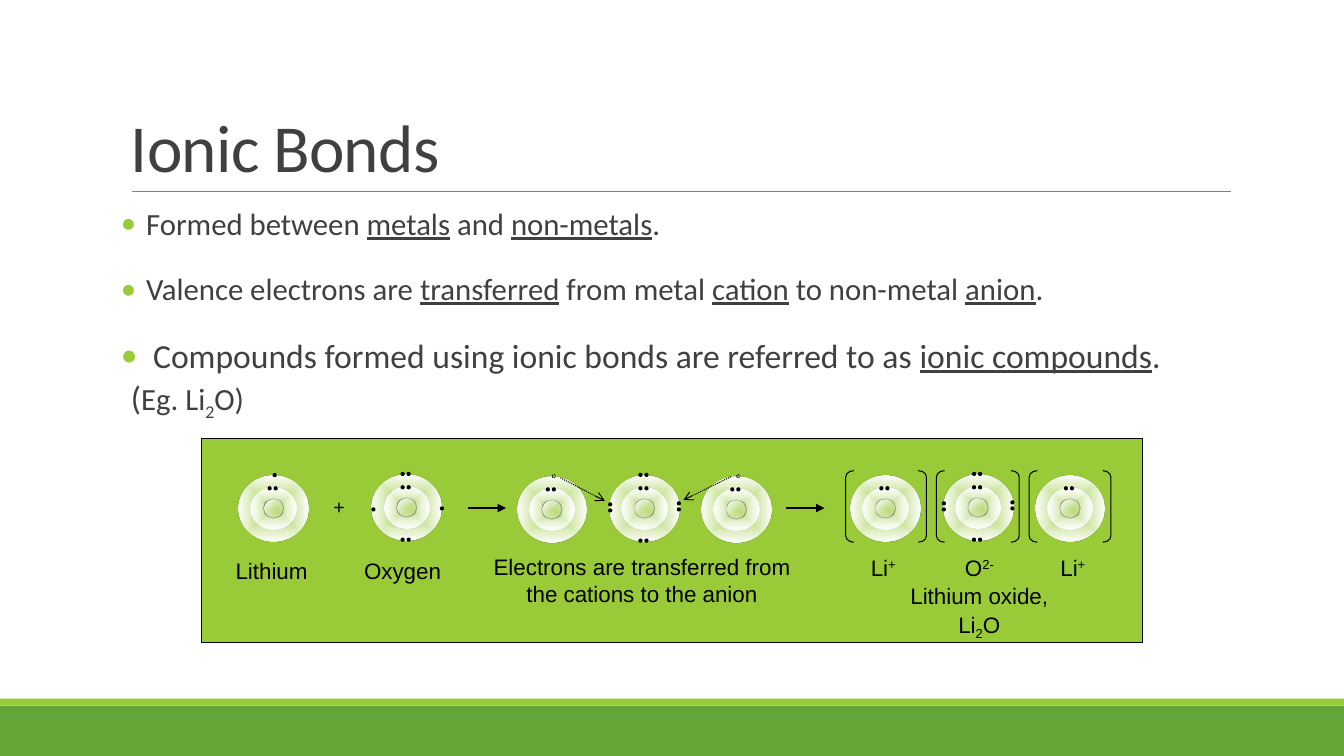
import pptx
import pptx.util
import pptx.dml.color
import pptx.enum.dml
import pptx.enum.shapes
import pptx.enum.text
import pptx.oxml
import pptx.oxml.ns
from lxml import etree

Pt = pptx.util.Pt
SHAPE = pptx.enum.shapes.MSO_SHAPE
DASH = pptx.enum.dml.MSO_LINE
ALIGN = pptx.enum.text.PP_ALIGN
qn = pptx.oxml.ns.qn
NS = 'xmlns:a="http://schemas.openxmlformats.org/drawingml/2006/main"'
LIME, GREEN, BLACK, GREY = "99CB38", "63A537", "000000", "404040"


def paint(target, color):
    """Give a fill, or a font's or line's colour, one solid hex colour."""
    if hasattr(target, "solid"):
        target.solid()
        target = target.fore_color
    else:
        target = target.color
    target.rgb = pptx.dml.color.RGBColor.from_string(color)


def write(paragraph, runs, font, size, color):
    """Add runs of (text, marks): u underlined, + raised, - lowered, L large."""
    for text, marks in runs:
        run = paragraph.add_run()
        run.text = text
        run.font.name = font
        run.font.size = Pt(24 if "L" in marks else size)
        paint(run.font, color)
        if "u" in marks:
            run.font.underline = True
        if "+" in marks:
            run.font._element.set("baseline", "30000") if hasattr(run.font, "_element") else run._r.get_or_add_rPr().set("baseline", "30000")
        if "-" in marks:
            run._r.get_or_add_rPr().set("baseline", "-25000")


deck = pptx.Presentation()
deck.slide_width, deck.slide_height = Pt(960), Pt(540)
slide = deck.slides.add_slide(deck.slide_layouts[6])
shapes = slide.shapes

# Footer bands and diagram panel
for left, top, width, height, color in [
    (0, 504, 960, 36, GREEN),
    (0, 499, 960, 5, LIME),
    (144, 313.2, 672, 146, LIME),
]:
    band = shapes.add_shape(SHAPE.RECTANGLE, Pt(left), Pt(top), Pt(width), Pt(height))
    band.shadow.inherit = False
    paint(band.fill, color)
    band.line.fill.background()
panel = band
paint(panel.line.fill, BLACK)
panel.line.width = Pt(0.75)

# Title
title = shapes.add_textbox(Pt(86.4), Pt(22.3), Pt(792), Pt(114.5)).text_frame
title.word_wrap = True
title.vertical_anchor = pptx.enum.text.MSO_ANCHOR.BOTTOM
heading = title.paragraphs[0]
heading.line_spacing = 0.85
write(heading, [("Ionic Bonds", "")], "Calibri", 48, GREY)
heading.runs[0]._r.get_or_add_rPr().set("spc", "-50")

# Bullet points: indent, space before, bulleted, runs
points = [
    (18, 0, True, [("Formed between ", ""), ("metals", "u"), (" and ", ""),
                   ("non-metals", "u"), (".", "")]),
    (18, 23, True, [("Valence electrons are ", ""), ("transferred", "u"),
                    (" from metal ", ""), ("cation", "u"),
                    (" to non-metal ", ""), ("anion", "u"), (".", "")]),
    (23, 23, True, [("Compounds formed using ionic bonds are referred to as ", "L"),
                    ("ionic compounds", "Lu"), (".", "L")]),
    (7.2, 2, False, [("(", "L"), ("Eg. Li", ""), ("2", "-"), ("O)", "")]),
]
body = shapes.add_textbox(Pt(86.4), Pt(145.4), Pt(792), Pt(166.3)).text_frame
body.word_wrap = True
body.margin_left = body.margin_right = 0
for number, (indent, before, bulleted, runs) in enumerate(points):
    point = body.add_paragraph() if number else body.paragraphs[0]
    point.line_spacing = 0.9
    point.space_before = Pt(before)
    properties = point._p.get_or_add_pPr()
    properties.set("marL", str(int(Pt(indent))))
    if bulleted:
        properties.set("indent", str(-int(Pt(indent))))
        bullet_color = etree.SubElement(properties, qn("a:buClr"))
        etree.SubElement(bullet_color, qn("a:srgbClr"), val=LIME)
        etree.SubElement(properties, qn("a:buFont"), typeface="Calibri")
        etree.SubElement(properties, qn("a:buChar"), char="•")
    write(point, runs, "Calibri", 22, GREY)

# Atom layers, back to front: width, height, outlined, gradient
ball = (f'<a:gradFill {NS} rotWithShape="1"><a:gsLst>'
        '<a:gs pos="0"><a:srgbClr val="FFFFFF"/></a:gs>'
        f'<a:gs pos="100000"><a:srgbClr val="{LIME}"><a:alpha val="6000"/></a:srgbClr></a:gs>'
        '</a:gsLst><a:lin ang="2700000" scaled="1"/></a:gradFill>')
shell = (f'<a:gradFill {NS} rotWithShape="1"><a:gsLst>'
         '<a:gs pos="0"><a:srgbClr val="FFFFFF"><a:alpha val="6000"/></a:srgbClr></a:gs>'
         '<a:gs pos="100000"><a:srgbClr val="FFFFFF"/></a:gs></a:gsLst><a:path path="shape">'
         '<a:fillToRect l="50000" t="50000" r="50000" b="50000"/></a:path></a:gradFill>')
layers = [(14.4, 13.7, True, ball), (32.4, 30.2, False, shell),
          (49.7, 46.8, False, shell), (13.7, 13, False, ball)]

# Electrons as offsets from the atom's centre
inner = [(-2.9, -14.4), (1.4, -14.4)]
lone_pairs = inner + [(x, y) for y in (-24, 23) for x in (-2.9, 1.4)]
lithium = inner + [(0.7, -23.8)]
oxygen = lone_pairs + [(-23.8, 1.4), (25.2, 0.7)]
oxide = lone_pairs + [(-24.5, -2.9), (-24.5, 1.4), (24.5, -3.6), (24.5, 0.7)]
vacancy = [(1.4, -23.8)]
atoms = [
    (195.5, 363.2, lithium, []), (290.5, 362.5, oxygen, []),
    (394.2, 364, inner, vacancy), (526, 364, inner, vacancy),
    (460.4, 363.2, oxide, []), (632.5, 363.2, inner, []),
    (764.3, 363.2, inner, []), (698.7, 362.5, oxide, []),
]
DOT = 2.2
for x, y, electrons, vacancies in atoms:
    for width, height, outlined, gradient in layers:
        layer = shapes.add_shape(SHAPE.OVAL, Pt(x - width / 2), Pt(y - height / 2),
                                 Pt(width), Pt(height))
        layer.shadow.inherit = False
        layer.fill.gradient()
        placeholder_fill = layer._element.spPr.find(qn("a:gradFill"))
        layer._element.spPr.replace(placeholder_fill, pptx.oxml.parse_xml(gradient))
        layer.line.fill.background()
        if outlined:
            paint(layer.line.fill, BLACK)
            layer.line.width = Pt(0.75)
    for dx, dy in electrons + vacancies:
        electron = shapes.add_shape(SHAPE.OVAL, Pt(x + dx - DOT / 2), Pt(y + dy - DOT / 2),
                                    Pt(DOT), Pt(DOT))
        electron.shadow.inherit = False
        paint(electron.line.fill, BLACK)
        electron.line.width = Pt(0.75)
        if (dx, dy) in vacancies:
            electron.fill.background()
            electron.line.dash_style = DASH.ROUND_DOT
        else:
            paint(electron.fill, BLACK)

# Ion brackets
for preset, lefts in [(SHAPE.LEFT_BRACKET, (604.1, 668.9, 735.1)),
                      (SHAPE.RIGHT_BRACKET, (655.9, 722.2, 787.7))]:
    for left in lefts:
        bracket = shapes.add_shape(preset, Pt(left), Pt(336.2), Pt(5.8), Pt(51.1))
        bracket.shadow.inherit = False
        bracket.adjustments[0] = 0.78
        bracket.fill.background()
        paint(bracket.line.fill, BLACK)
        bracket.line.width = Pt(0.75)

# Title rule, reaction arrows and electron transfers
for x1, y1, x2, y2, color, weight, head in [
    (94.5, 136.8, 879, 136.8, "808080", 0.5, None),
    (334.1, 362.9, 361.4, 362.9, BLACK, 1.5, "triangle"),
    (561.6, 362.9, 589, 362.9, BLACK, 1.5, "triangle"),
    (400.3, 341.3, 432, 357.8, BLACK, 0.75, "arrow"),
    (522, 340.6, 488.2, 357.1, BLACK, 0.75, "arrow"),
]:
    arrow = shapes.add_connector(pptx.enum.shapes.MSO_CONNECTOR.STRAIGHT,
                                 Pt(x1), Pt(y1), Pt(x2), Pt(y2))
    paint(arrow.line.fill, color)
    arrow.line.width = Pt(weight)
    if head == "arrow":
        arrow.line.dash_style = DASH.ROUND_DOT
    if head:
        etree.SubElement(arrow.line._get_or_add_ln(), qn("a:tailEnd"), type=head)
    etree.SubElement(arrow._element.spPr, qn("a:effectLst"))

# Diagram labels: box, size, paragraphs of runs
labels = [
    (137.5, 394.6, 113, 31, 16, [[("Lithium", "")]]),
    (233.3, 394.6, 113, 31, 16, [[("Oxygen ", "")]]),
    (230.4, 349.9, 23.8, 28.1, 14, [[("+", "")]]),
    (339.8, 391.7, 237.6, 53.3, 16,
     [[("Electrons are transferred from the cations to the anion", "")]]),
    (604.1, 392.4, 190.8, 75.6, 16,
     [[("\tLi", ""), ("+", "+"), ("\tO", ""), ("2-", "+"), ("\tLi", ""), ("+", "+")],
      [("Lithium oxide,", "")],
      [("Li", ""), ("2", "-"), ("O", "")]]),
]
for left, top, width, height, size, lines in labels:
    label = shapes.add_textbox(Pt(left), Pt(top), Pt(width), Pt(height)).text_frame
    label.word_wrap = True
    for number, runs in enumerate(lines):
        line = label.add_paragraph() if number else label.paragraphs[0]
        line.alignment = ALIGN.CENTER
        if number:
            line.space_before = Pt(1)
        write(line, runs, "Arial", size, BLACK)

# Tab stops that put each ion symbol under its atom
ions = label.paragraphs[0]
ions.alignment = ALIGN.LEFT
tab_stops = etree.SubElement(ions._p.get_or_add_pPr(), qn("a:tabLst"))
for position in (10.8, 78.1, 146.2):
    etree.SubElement(tab_stops, qn("a:tab"), pos=str(int(Pt(position))), algn="l")

deck.save("out.pptx")
